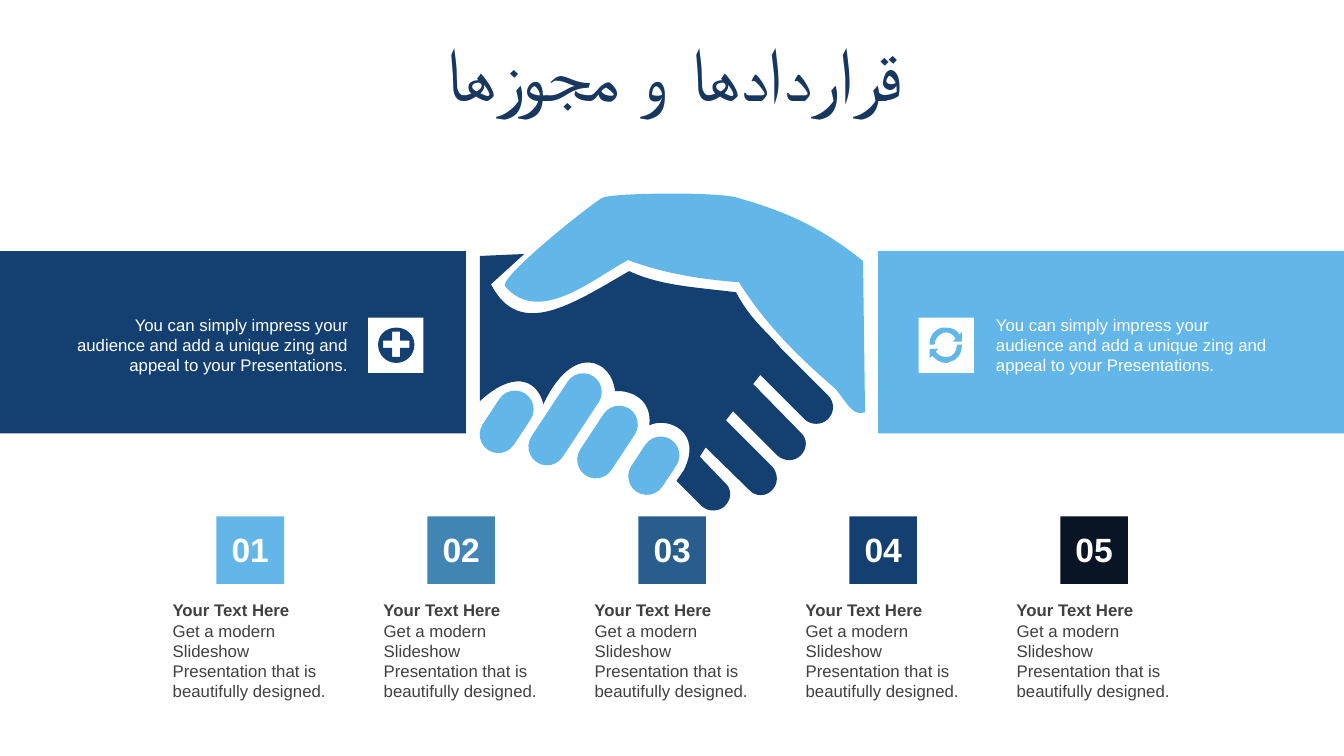
from dataclasses import dataclass

from lxml import etree
from pptx import Presentation
from pptx import util as u
from pptx.dml.color import RGBColor
from pptx.enum import shapes, text
from pptx.oxml.ns import qn

# Grid: the slide is 1333 columns wide and 750 rows high, with square cells
COLUMNS, ROWS = 1333, 750
CELL = u.Inches(0.01)
FONT = "Arial"

COLOURS = {
    "white": "FFFFFF", "sky": "62B7E8", "steel": "4185B5", "denim": "285D8D",
    "navy": "134070", "ink": "091424", "title": "17375E", "body": "404040",
}
ALIGN = text.PP_ALIGN
RECTANGLE = shapes.MSO_SHAPE.RECTANGLE
PILL = shapes.MSO_SHAPE.ROUNDED_RECTANGLE


@dataclass(frozen=True)
class Box:
    left: float
    top: float
    width: float
    height: float

    def emu(self) -> list[int]:
        return [round(n * CELL) for n in (self.left, self.top, self.width, self.height)]


@dataclass(frozen=True)
class Style:
    size: int
    colour: str
    bold: bool = False
    align: ALIGN = ALIGN.LEFT
    anchor: text.MSO_ANCHOR = text.MSO_ANCHOR.TOP


@dataclass(frozen=True)
class Outline:
    """Contours in grid cells: M moves, L draws a line, C a Bézier curve, Z closes."""
    box: Box
    strokes: str


@dataclass(frozen=True)
class Banner:
    panel: Box
    tile: Box
    caption: Box
    colour: str
    align: ALIGN
    icon: Outline


@dataclass(frozen=True)
class Step:
    number: str
    colour: str


UPPER_HAND = Outline(Box(501, 192, 357, 218), """
M 623 258 C 590 275 535 324 501 284 C 494 276 585 203 598 196 C 611 191 720 190 734 197
C 787 212 820 230 856 259 L 858 409 C 847 412 844 406 829 386 C 787 350 757 318 733 280
C 693 277 658 271 623 258 Z""")
LOWER_HAND = Outline(Box(476, 252, 345, 250), """
M 520 252 L 487 282 C 515 337 567 302 624 269 C 656 284 692 285 730 290
C 745 318 759 327 774 345 L 821 392 C 828 399 828 409 821 416 C 815 422 804 422 798 416
L 754 372 L 747 381 L 794 429 C 801 435 801 445 794 452 C 788 458 778 458 771 452
L 727 408 L 720 417 L 766 463 C 772 470 772 480 766 486 C 760 493 749 493 743 486
L 700 444 L 694 453 L 719 479 C 726 485 726 495 719 502 C 713 508 702 508 696 502
L 673 479 L 671 477 L 678 467 C 698 428 662 413 644 422 C 647 397 627 387 610 388
C 607 357 568 339 539 401 C 532 374 507 369 476 398 L 476 254 L 520 252 Z""")
PLUS_ICON = Outline(Box(375, 325, 35, 35), """
M 389 329 L 389 338 L 380 338 L 380 345 L 389 345 L 389 354 L 397 354 L 397 345
L 406 345 L 406 338 L 397 338 L 397 329 Z
M 393 325 C 403 325 411 332 411 342 C 411 352 403 360 393 360
C 383 360 375 352 375 342 C 375 332 383 325 393 325 Z""")
CYCLE_ICON = Outline(Box(922, 325, 33, 35), """
M 949 342 L 954 342 L 954 343 L 954 343 C 954 351 949 358 942 359 C 941 360 939 360 938 360
C 933 360 928 357 925 353 L 922 355 L 922 346 L 931 346 L 928 349
C 931 353 936 355 941 354 C 946 353 949 348 949 343 L 949 343 Z
M 938 325 C 944 325 949 327 952 332 L 954 329 L 954 339 L 945 339 L 948 336
C 945 331 940 329 936 330 C 931 332 927 336 927 342 L 927 342 L 927 342 L 922 342
L 922 341 L 922 341 C 922 333 927 327 934 325 C 936 325 937 325 938 325 Z""")
STROKES = {"M": ("a:moveTo", 1), "L": ("a:lnTo", 1), "C": ("a:cubicBezTo", 3), "Z": ("a:close", 0)}

FINGERS = [Box(484, 385, 37, 67), Box(542, 365, 37, 102),
           Box(584, 399, 37, 79), Box(630, 431, 37, 62)]
FINGER_TILT = 33.4

BANNERS = [
    Banner(Box(0, 249, 462, 181), Box(365, 315, 55, 55), Box(52, 307, 303, 71),
           "navy", ALIGN.RIGHT, PLUS_ICON),
    Banner(Box(871, 249, 462, 181), Box(911, 315, 55, 55), Box(978, 307, 303, 71),
           "sky", ALIGN.LEFT, CYCLE_ICON),
]
BANNER_TEXT = ("You can simply impress your audience and add a unique zing "
               "and appeal to your Presentations.")

STEPS = [Step("01", "sky"), Step("02", "steel"), Step("03", "denim"),
         Step("04", "navy"), Step("05", "ink")]
STEP_LEFT, STEP_PITCH, STEP_SIDE = 214.75, 209.25, 67
STEP_HEADING = "Your Text Here"
STEP_TEXT = "Get a modern Slideshow Presentation that is beautifully designed."


def colour_of(name: str) -> RGBColor:
    return RGBColor.from_string(COLOURS[name])


def paint(shape, colour: str) -> None:
    shape.shadow.inherit = False
    shape.fill.solid()
    shape.fill.fore_color.rgb = colour_of(colour)
    shape.line.fill.background()


def add_block(parent, kind: shapes.MSO_SHAPE, box: Box, colour: str):
    shape = parent.add_shape(kind, *box.emu())
    paint(shape, colour)
    return shape


def add_text(parent, box: Box, wording: str, style: Style, grow: bool = True):
    shape = parent.add_textbox(*box.emu())
    frame = shape.text_frame
    frame.word_wrap = True
    frame.vertical_anchor = style.anchor
    if grow:
        frame.auto_size = text.MSO_AUTO_SIZE.SHAPE_TO_FIT_TEXT
    paragraph = frame.paragraphs[0]
    paragraph.alignment = style.align
    run = paragraph.add_run()
    run.text = wording
    run.font.name = FONT
    run.font.size = u.Pt(style.size)
    run.font.bold = style.bold
    run.font.color.rgb = colour_of(style.colour)
    # Persian letters take the complex-script font
    etree.SubElement(run._r.get_or_add_rPr(), qn("a:cs"), typeface=FONT)
    return paragraph


def add_outline(parent, outline: Outline, colour: str) -> None:
    """Start from the bounding box, then give its path the real strokes."""
    left, top, width, height = outline.box.emu()
    right, bottom = left + width, top + height
    builder = parent.build_freeform(left, top)
    builder.add_line_segments([(right, top), (right, bottom), (left, bottom)])
    shape = builder.convert_to_shape()
    paint(shape, colour)

    path = next(shape._element.iter(qn("a:path")))
    for child in list(path):
        path.remove(child)
    tokens = iter(outline.strokes.split())
    for letter in tokens:
        tag, point_count = STROKES[letter]
        stroke = etree.SubElement(path, qn(tag))
        for _ in range(point_count):
            x, y = int(next(tokens)) * CELL - left, int(next(tokens)) * CELL - top
            etree.SubElement(stroke, qn("a:pt"), x=str(x), y=str(y))


def add_handshake(parent) -> None:
    add_outline(parent, UPPER_HAND, "sky")
    for finger in FINGERS:
        shape = add_block(parent, PILL, finger, "sky")
        shape.adjustments[0] = 0.5
        shape.rotation = FINGER_TILT
    add_outline(parent, LOWER_HAND, "navy")


def add_step(parent, step: Step, left: float) -> None:
    add_block(parent, RECTANGLE, Box(left, 512.25, STEP_SIDE, STEP_SIDE), step.colour)
    add_text(parent, Box(left, 519.5, STEP_SIDE, 50), step.number,
             Style(24, "white", True, ALIGN.CENTER, text.MSO_ANCHOR.MIDDLE))
    add_text(parent, Box(left - 53.25, 610.75, 173, 91), STEP_TEXT, Style(12, "body"))
    add_text(parent, Box(left - 53.5, 590, 172, 30), STEP_HEADING, Style(12, "body", True))


def main() -> None:
    presentation = Presentation()
    presentation.slide_width = COLUMNS * CELL
    presentation.slide_height = ROWS * CELL
    slide = presentation.slides.add_slide(presentation.slide_layouts[6])

    # Title
    title = add_text(slide.shapes, Box(35, 37, 1266, 79), "قراردادها و مجوزها",
                     Style(54, "title", False, ALIGN.CENTER, text.MSO_ANCHOR.MIDDLE), False)
    title.line_spacing = 0.9
    title.space_before = u.Pt(10)

    # Handshake between the two banners
    add_handshake(slide.shapes.add_group_shape().shapes)
    for banner in BANNERS:
        add_block(slide.shapes, RECTANGLE, banner.panel, banner.colour)
        add_block(slide.shapes, RECTANGLE, banner.tile, "white")
        add_text(slide.shapes, banner.caption, BANNER_TEXT, Style(12, "white", align=banner.align))
        add_outline(slide.shapes, banner.icon, banner.colour)

    # Row of numbered steps
    step_row = slide.shapes.add_group_shape().shapes
    for i, step in enumerate(STEPS):
        add_step(step_row, step, STEP_LEFT + i * STEP_PITCH)

    presentation.save("out.pptx")


if __name__ == "__main__":
    main()
